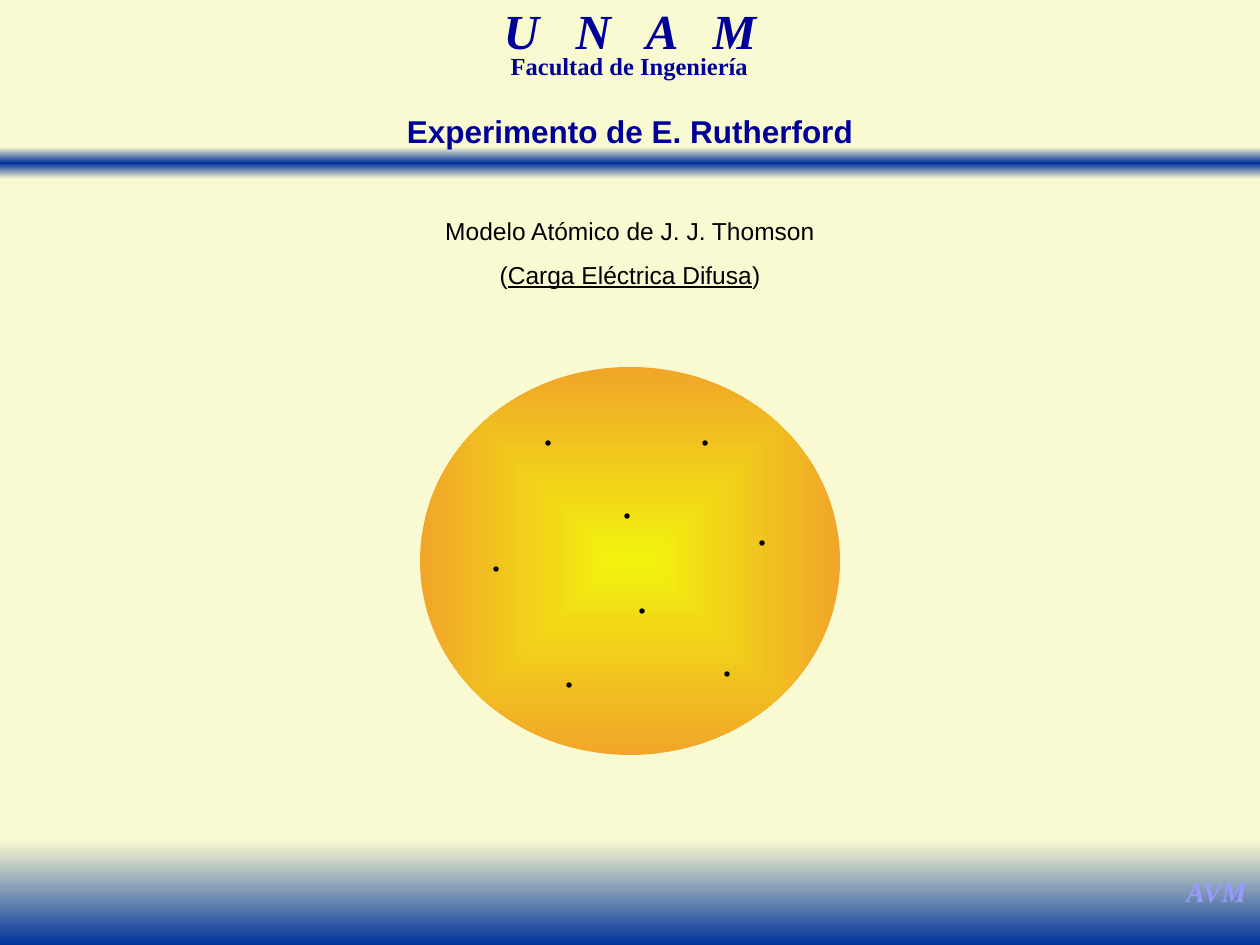
"""Build the slide on the Thomson atom model."""
from pptx import Presentation
from pptx.dml.color import RGBColor
from pptx.enum.shapes import MSO_SHAPE
from pptx.enum.text import PP_ALIGN
from pptx.oxml import parse_xml
from pptx.oxml.ns import nsdecls
from pptx.util import Pt

RECT, OVAL = MSO_SHAPE.RECTANGLE, MSO_SHAPE.OVAL
CENTER = PP_ALIGN.CENTER
PX = 914400 / 126
HEX = {"cream": "FAFAD2", "blue": "003399", "navy": "000099", "lilac": "9999FF",
       "ink": "000000", "yellow": "F2F20E", "orange": "F1A529"}
LINEAR = '<a:lin ang="5400000" scaled="0"/>'
RADIAL = '<a:path path="shape"><a:fillToRect l="50000" t="50000" r="50000" b="50000"/></a:path>'
DOTS = [(546, 441), (703, 441), (625, 514), (494, 567),
        (760, 541), (640, 609), (725, 672), (567, 683)]


def rgb(name):
    return RGBColor.from_string(HEX[name])


def emu(*sizes):
    return [round(size * PX) for size in sizes]


def write(par, text, size=14, face="Arial", color="ink", bold=False, slant=False,
          under=False, track=0):
    run = par.add_run()
    run.text = text
    font = run.font
    font.size, font.name, font.bold = Pt(size), face, bold
    font.italic, font.underline = slant, under
    font.color.rgb = rgb(color)
    if track:
        run.font._element.set("spc", str(track * 100))


class Deck:
    """Hold the style and the current slide."""

    def __init__(self, wide, high):
        self.prs = Presentation()
        self.prs.slide_width, self.prs.slide_height = emu(wide, high)
        self.slide = self.prs.slides.add_slide(self.prs.slide_layouts[6])
        fill = self.slide.background.fill
        fill.solid()
        fill.fore_color.rgb = rgb("cream")

    def blend(self, kind, box, colors, mode=LINEAR):
        shape = self.slide.shapes.add_shape(kind, *emu(*box))
        shape.shadow.inherit = False
        shape.line.fill.background()
        step = 100000 // (len(colors) - 1)
        stops = "".join(f'<a:gs pos="{i * step}"><a:srgbClr val="{HEX[name]}"/></a:gs>'
                        for i, name in enumerate(colors))
        shape.element.spPr.insert(2, parse_xml(
            f'<a:gradFill {nsdecls("a")} rotWithShape="1"><a:gsLst>{stops}</a:gsLst>'
            f'{mode}</a:gradFill>'))

    def dots(self, spots, size):
        group = self.slide.shapes.add_group_shape()
        for x, y in spots:
            dot = group.shapes.add_shape(OVAL, *emu(x, y, size, size))
            dot.shadow.inherit = False
            dot.fill.solid()
            dot.fill.fore_color.rgb = dot.line.color.rgb = rgb("ink")
            dot.line.width = Pt(0.75)

    def text(self, box, lines, wrap=True, pitch=None, gap=0, **style):
        frame = self.slide.shapes.add_textbox(*emu(*box)).text_frame
        frame.word_wrap = wrap
        for i, line in enumerate(lines):
            par = frame.add_paragraph() if i else frame.paragraphs[0]
            par.alignment = CENTER
            par.line_spacing = pitch
            if i:
                par.space_before = Pt(gap)
            for words, extra in line:
                write(par, words, **style, **extra)


def main():
    deck = Deck(1260, 945)
    serif = {"face": "Times New Roman", "bold": True}
    deck.blend(RECT, (0, 147, 1260, 32), ["cream", "blue", "cream"])
    deck.text((383, 10, 494, 54), [[("U N A ", {"track": 7}), ("M", {})]],
              pitch=0.7, size=28, color="navy", slant=True, **serif)
    deck.text((404, 53, 451, 33), [[("Facultad de Ingeniería", {})]],
              pitch=0.7, color="navy", **serif)
    deck.blend(RECT, (0, 840, 1260, 105), ["cream", "blue"])
    deck.text((1173, 868, 87, 47), [[("AVM", {})]],
              wrap=False, size=16, color="lilac", slant=True, **serif)
    deck.text((357, 210, 546, 87),
              [[("Modelo Atómico de J. J. Thomson", {})],
               [("(", {}), ("Carga Eléctrica Difusa", {"under": True}), (")", {})]], gap=8)
    deck.blend(OVAL, (420, 367, 420, 388), ["yellow", "orange"], RADIAL)
    deck.dots(DOTS, 4)
    deck.text((357, 106, 546, 50), [[("Experimento de E. Rutherford", {})]],
              size=18, color="navy", bold=True)
    deck.prs.save("out.pptx")


if __name__ == "__main__":
    main()
